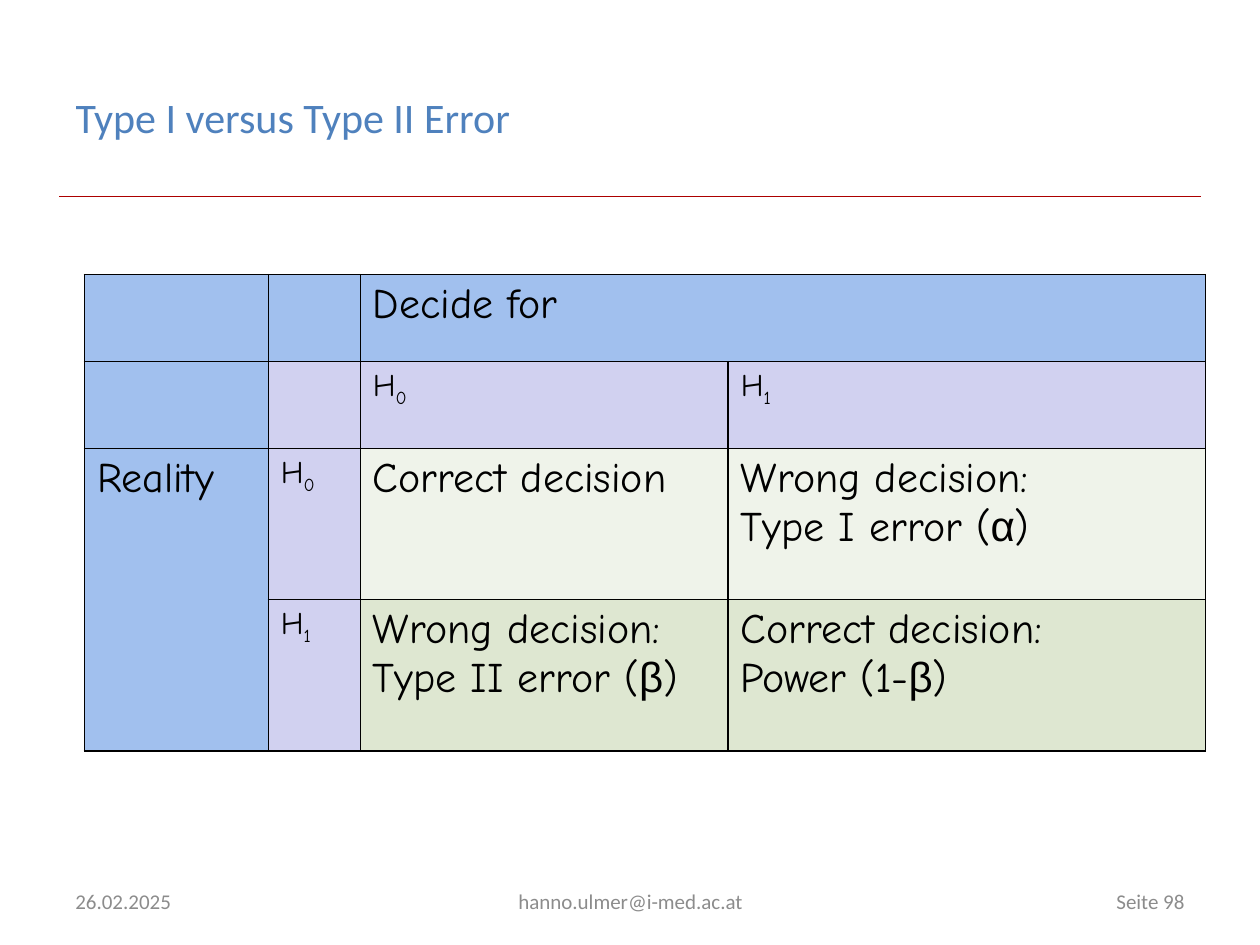
"""Build a slide with a decision table for type I and type II errors."""
from lxml.etree import SubElement
from pptx import Presentation
from pptx.dml.color import RGBColor
from pptx.enum.shapes import MSO_CONNECTOR
from pptx.enum.text import MSO_ANCHOR, PP_ALIGN
from pptx.oxml import parse_xml
from pptx.oxml.ns import nsdecls, qn
from pptx.util import Inches, Pt


def style(run, size, font, colour):
    run.font.size = Pt(size)
    run.font.name = font
    run.font.color.rgb = RGBColor.from_string(colour)


def border(side):
    return parse_xml(
        f'<a:{side} {nsdecls("a")} w="12700"><a:solidFill>'
        f'<a:srgbClr val="000000"/></a:solidFill></a:{side}>')


BLUE, LILAC, PALE, GREEN = "A1C0EE", "D1D1F0", "EFF3EA", "DEE7D1"
COLUMNS = [1.46, 0.73, 2.92, 3.79]
ROWS = [0.69, 0.69, 1.2, 1.2]
FILLS = [
    [BLUE, BLUE, BLUE, BLUE],
    [BLUE, LILAC, LILAC, LILAC],
    [BLUE, LILAC, PALE, PALE],
    [BLUE, LILAC, GREEN, GREEN],
]
WORDING = [
    ["", "", "Decide for", ""],
    ["", "", "H|0", "H|1"],
    ["Reality", "H|0", "Correct decision", "Wrong decision:\nType I error (|α|)"],
    ["", "H|1", "Wrong decision:\nType II error (|β|)", "Correct decision:\nPower (1-|β|)"],
]
FOOTER = [
    ("26.02.2025", 0.5, 2.33, PP_ALIGN.LEFT),
    ("hanno.ulmer@i-med.ac.at", 3.42, 3.17, PP_ALIGN.CENTER),
    ("Seite 98", 7.17, 2.33, PP_ALIGN.RIGHT),
]

deck = Presentation()
deck.slide_width, deck.slide_height = Inches(10), Inches(7.5)
slide = deck.slides.add_slide(deck.slide_layouts[5])

rule = slide.shapes.add_connector(
    MSO_CONNECTOR.STRAIGHT, Inches(0.47), Inches(1.56), Inches(9.53), Inches(1.56))
rule.line.color.rgb = RGBColor.from_string("AC0000")
rule.line.width = Pt(0.25)
SubElement(rule._element.spPr, qn("a:effectLst"))

title = slide.shapes.title
title.left, title.top = Inches(0.5), Inches(0.3)
title.width, title.height = Inches(6.77), Inches(1.25)
title.text_frame.text = "Type I versus Type II Error"
title.text_frame.vertical_anchor = MSO_ANCHOR.MIDDLE
title.text_frame.paragraphs[0].alignment = PP_ALIGN.LEFT
style(title.text_frame.paragraphs[0].runs[0], 24, "Calibri", "4F81BD")

decisions = slide.shapes.add_table(
    len(ROWS), len(COLUMNS), Inches(0.67), Inches(2.18),
    Inches(sum(COLUMNS)), Inches(sum(ROWS))).table
decisions.first_row = decisions.horz_banding = False
for column, width in zip(decisions.columns, COLUMNS):
    column.width = Inches(width)
for row, height in zip(decisions.rows, ROWS):
    row.height = Inches(height)
decisions.cell(0, 2).merge(decisions.cell(0, 3))
decisions.cell(2, 0).merge(decisions.cell(3, 0))

for row, fills, wordings in zip(decisions.rows, FILLS, WORDING):
    for cell, fill, wording in zip(row.cells, fills, wordings):
        cell.fill.solid()
        cell.fill.fore_color.rgb = RGBColor.from_string(fill)
        for place, side in enumerate(["lnL", "lnR", "lnT", "lnB"]):
            cell._tc.tcPr.insert(place, border(side))
        if not wording:
            continue
        hypothesis = wording.startswith("H|")
        cell.text_frame.text = wording.replace("|", "")
        for paragraph, line in zip(cell.text_frame.paragraphs, wording.split("\n")):
            paragraph.clear()
            for part in line.split("|"):
                run = paragraph.add_run()
                run.text = part
                font = "Arial" if part in ("α", "β") else "Comic Neue"
                style(run, 18 if hypothesis else 24, font, "000000")
                if hypothesis and part != "H":
                    run.font._element.set("baseline", "-25000")

for wording, left, width, alignment in FOOTER:
    note = slide.shapes.add_textbox(
        Inches(left), Inches(6.95), Inches(width), Inches(0.4)).text_frame
    note.word_wrap = True
    note.vertical_anchor = MSO_ANCHOR.MIDDLE
    note.text = wording
    note.paragraphs[0].alignment = alignment
    style(note.paragraphs[0].runs[0], 12, "Calibri", "8C8C8C")

deck.save("out.pptx")
